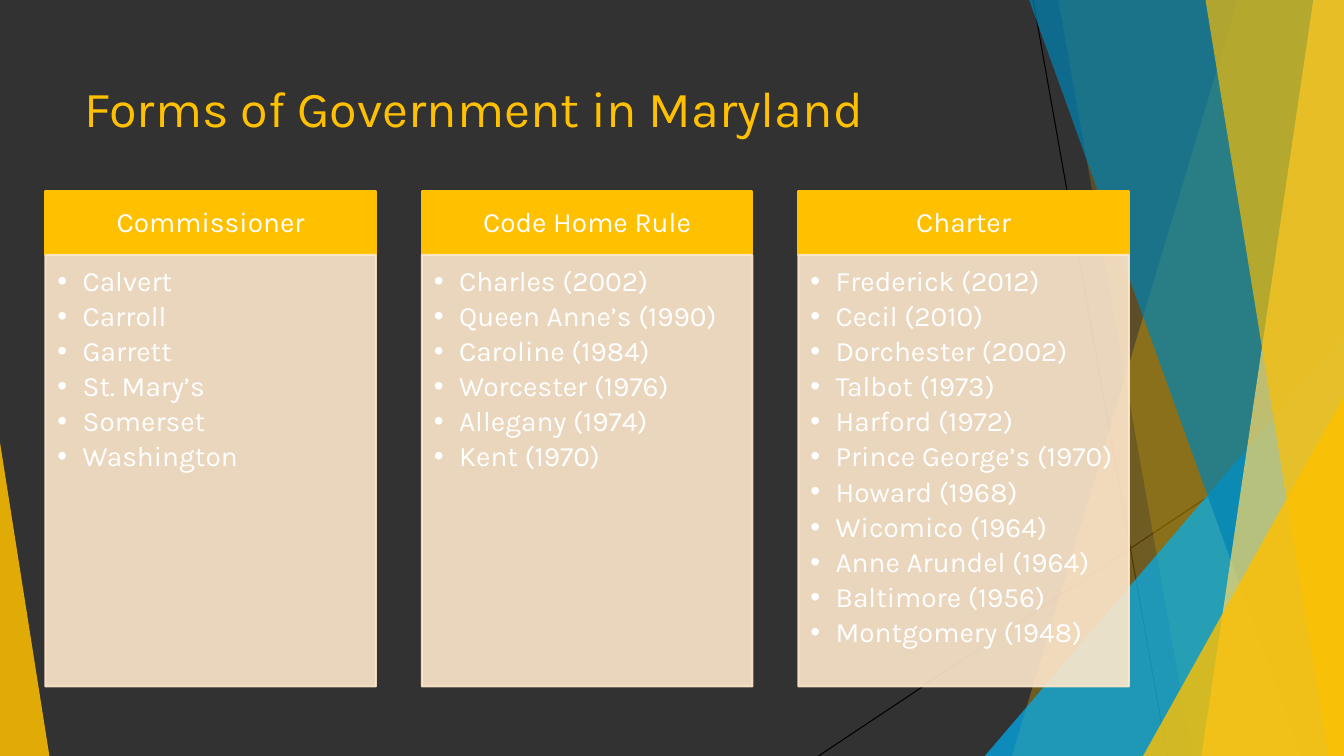
from dataclasses import dataclass

from lxml import etree
from pptx import Presentation
from pptx import util as u
from pptx.dml.color import RGBColor
from pptx.enum import shapes, text
from pptx.oxml.ns import qn


@dataclass(frozen=True)
class Theme:
    """Colours, font and type sizes of the deck."""
    background: str = "323232"
    gold: str = "FFC000"
    pale_gold: str = "FFD966"
    sky: str = "00B0F0"
    blue: str = "0084B4"
    cream: str = "FFE8CC"
    white: str = "FFFFFF"
    black: str = "000000"
    font: str = "Karla"
    title_size: float = 36
    body_size: float = 20


class Page:
    """Draws styled elements on one slide, with lengths in points."""

    def __init__(self, deck, theme):
        self.theme = theme
        self.slide = deck.slides.add_slide(deck.slide_layouts[6])
        self.shapes = self.slide.shapes
        self.paint(self.slide.background.fill, theme.background)

    def paint(self, fill, color, opacity=100):
        """Set a solid fill with an opacity in percent."""
        fill.solid()
        fill.fore_color.rgb = RGBColor.from_string(color)
        if opacity < 100:
            for tone in fill._xPr.iterfind(".//" + qn("a:srgbClr")):
                etree.SubElement(tone, qn("a:alpha"), val=str(opacity * 1000))

    def finish(self, shape, color, opacity, outlined=False):
        """Fill a shape, drop its shadow and style its outline."""
        shape.shadow.inherit = False
        if outlined:
            shape.line.width = u.Pt(1.5)
            self.paint(shape.line.fill, color, opacity)
        else:
            shape.line.fill.background()
        self.paint(shape.fill, color, opacity)

    def line(self, *ends):
        """Draw a thin straight line."""
        connector = self.shapes.add_connector(
            shapes.MSO_CONNECTOR.STRAIGHT, *map(u.Pt, ends))
        connector.line.width = u.Pt(0.75)
        connector.line.color.rgb = RGBColor.from_string(self.theme.black)
        etree.SubElement(connector._element.spPr, qn("a:effectLst"))

    def band(self, top_left, bottom_left, color, opacity):
        """Draw a slanted band reaching the right edge of the slide."""
        corners = [(960, 0), (960, 540), (bottom_left, 540)]
        builder = self.shapes.build_freeform(u.Pt(top_left), 0)
        builder.add_line_segments([(u.Pt(x), u.Pt(y)) for x, y in corners])
        self.finish(builder.convert_to_shape(), color, opacity)

    def triangle(self, left, top, width, apex, color, opacity):
        """Draw a triangle standing on the bottom edge of the slide."""
        shape = self.shapes.add_shape(
            shapes.MSO_SHAPE.ISOSCELES_TRIANGLE,
            *map(u.Pt, (left, top, width, 540 - top)))
        shape.adjustments[0] = apex
        self.finish(shape, color, opacity)

    def panel(self, place, color, opacity=100):
        """Draw an outlined rectangle and return it."""
        shape = self.shapes.add_shape(
            shapes.MSO_SHAPE.RECTANGLE, *map(u.Pt, place))
        self.finish(shape, color, opacity, outlined=True)
        return shape

    def fill_text(self, box, lines, size, color, margins, anchor="MIDDLE",
                  align="LEFT", spacing=1.0, after=0, bullet=False):
        """Put one paragraph per line into a box."""
        frame = box.text_frame
        frame.word_wrap = True
        frame.vertical_anchor = text.MSO_ANCHOR[anchor]
        (frame.margin_left, frame.margin_top,
         frame.margin_right, frame.margin_bottom) = map(u.Pt, margins)
        for number, words in enumerate(lines):
            para = frame.add_paragraph() if number else frame.paragraphs[0]
            para.alignment = text.PP_ALIGN[align]
            para.line_spacing = spacing
            para.space_after = u.Pt(after)
            if bullet:
                self.bullet(para)
            span = para.add_run()
            span.text = words
            span.font.name = self.theme.font
            span.font.size = u.Pt(size)
            span.font.color.rgb = RGBColor.from_string(color)

    def bullet(self, para):
        """Give a paragraph a hanging bullet."""
        properties = para._p.get_or_add_pPr()
        properties.set("marL", str(u.Pt(18)))
        properties.set("indent", str(-u.Pt(18)))
        etree.SubElement(properties, qn("a:buFont"), typeface="Arial")
        etree.SubElement(properties, qn("a:buChar"), char="•")

    def title(self, words):
        """Add the slide title."""
        box = self.shapes.add_textbox(*map(u.Pt, (53.28, 48.24, 846, 56.16)))
        self.fill_text(box, [words], self.theme.title_size, self.theme.gold,
                       (7.2, 3.6, 7.2, 3.6))

    def column(self, left, heading, counties):
        """Draw a heading bar above a list of counties."""
        theme, width = self.theme, 236.16
        bar = self.panel((left, 136.8, width, 45.36), theme.gold)
        self.fill_text(bar, [heading], theme.body_size, theme.white,
                       (11.5, 6.5, 11.5, 6.5), align="CENTER", spacing=0.9)
        body = self.panel((left, 182.16, width, 308.16), theme.cream, 90)
        self.fill_text(body, counties, theme.body_size, theme.white,
                       (8.64, 8.64, 10, 12), anchor="TOP", spacing=0.9,
                       after=3.5, bullet=True)

    def backdrop(self):
        """Draw the slanted lines, bands and triangles."""
        theme = self.theme
        self.line(738, 0, 833.76, 540)
        self.line(960, 290.16, 584.64, 540)
        self.band(884.16, 722.88, theme.gold, 30)
        self.band(756, 851.76, theme.gold, 20)
        self.triangle(703.44, 239.76, 256.56, 1, theme.sky, 72)
        self.band(735.12, 929.52, theme.blue, 70)
        self.band(938.16, 858.24, theme.pale_gold, 70)
        self.band(861.12, 948.96, theme.gold, 65)
        self.triangle(816.48, 282.96, 143.52, 1, theme.gold, 80)
        self.triangle(0, 316.08, 35.28, 0, theme.gold, 85)


GOVERNMENTS = {
    "Commissioner": ["Calvert", "Carroll", "Garrett", "St. Mary’s",
                     "Somerset", "Washington"],
    "Code Home Rule": ["Charles (2002)", "Queen Anne’s (1990)",
                       "Caroline (1984)", "Worcester (1976)",
                       "Allegany (1974)", "Kent (1970)"],
    "Charter": ["Frederick (2012)", "Cecil (2010)", "Dorchester (2002)",
                "Talbot (1973)", "Harford (1972)", "Prince George’s (1970)",
                "Howard (1968)", "Wicomico (1964)", "Anne Arundel (1964)",
                "Baltimore (1956)", "Montgomery (1948)"],
}


def main():
    """Build and save the deck."""
    deck = Presentation()
    deck.slide_width, deck.slide_height = u.Pt(960), u.Pt(540)
    page = Page(deck, Theme())
    page.backdrop()
    for index, (heading, counties) in enumerate(GOVERNMENTS.items()):
        page.column(32.4 + 268.92 * index, heading, counties)
    page.title("Forms of Government in Maryland")
    deck.save("out.pptx")


if __name__ == "__main__":
    main()
